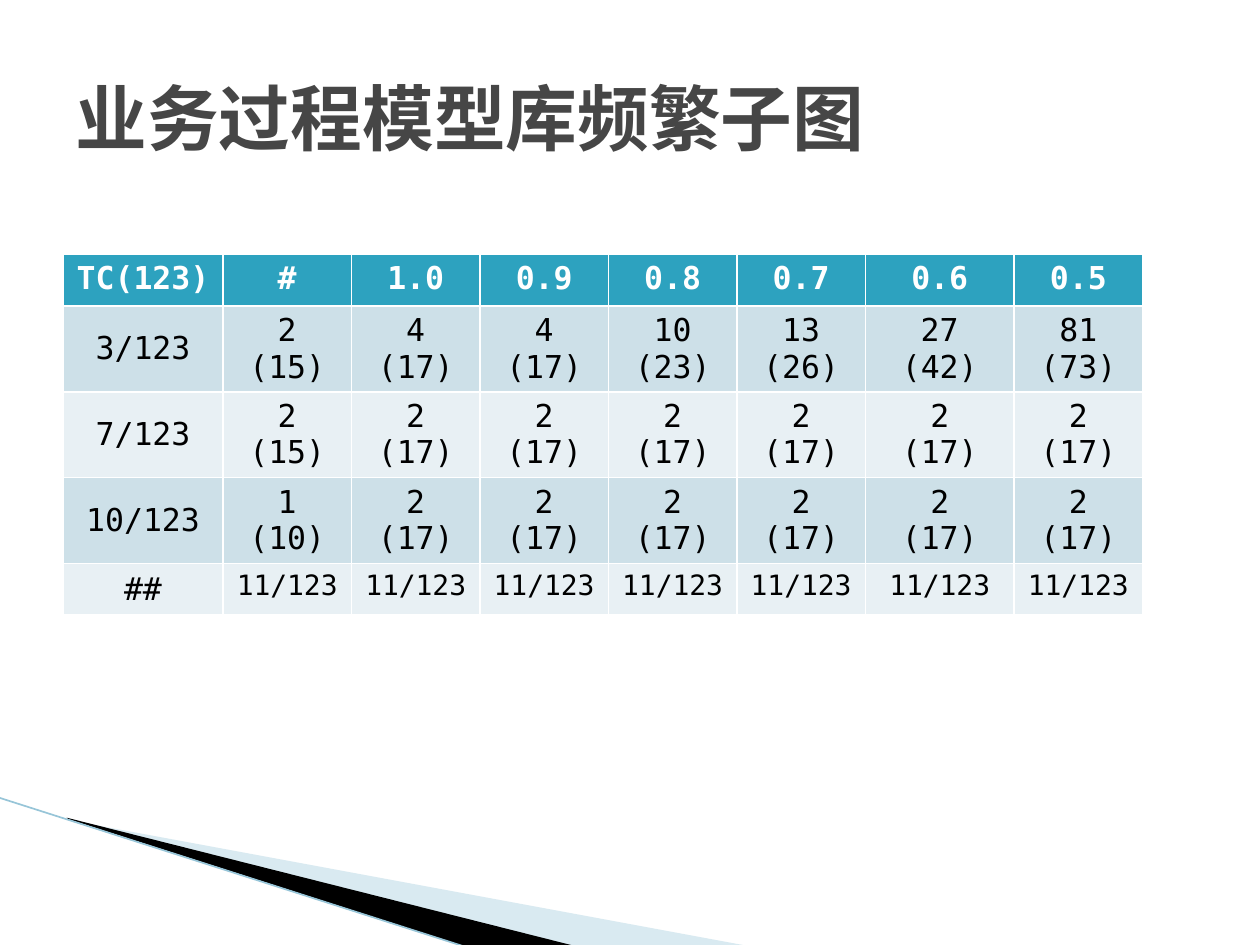
"""Build a slide with a table of frequent subgraphs in a process model library."""
from typing import NamedTuple, Optional

from lxml import etree
from pptx import Presentation
from pptx.dml.color import RGBColor
from pptx.enum.shapes import MSO_CONNECTOR
from pptx.enum.text import MSO_ANCHOR, PP_ALIGN
from pptx.oxml.ns import qn
from pptx.util import Inches, Pt

STRAIGHT = MSO_CONNECTOR.STRAIGHT
MIDDLE, TOP = MSO_ANCHOR.MIDDLE, MSO_ANCHOR.TOP
CENTER, LEFT = PP_ALIGN.CENTER, PP_ALIGN.LEFT
FACE = "DejaVu Sans Mono"
WHITE = RGBColor(0xFF, 0xFF, 0xFF)
BLACK = RGBColor(0x00, 0x00, 0x00)
GRAY = RGBColor(0x46, 0x46, 0x46)
TEAL = RGBColor(0x2D, 0xA2, 0xBF)
SKY = RGBColor(0xA0, 0xCB, 0xDC)
EDGE = RGBColor(0x97, 0xC5, 0xD8)
BANDS = (RGBColor(0xCD, 0xE0, 0xE8), RGBColor(0xE8, 0xF0, 0xF4))


class Style(NamedTuple):
    size: float
    color: RGBColor
    bold: bool = False
    align: PP_ALIGN = CENTER


class Wedge(NamedTuple):
    points: list[tuple[float, float]]
    color: RGBColor
    alpha: Optional[int] = None


HEAD = Style(18, WHITE, True)
BODY = Style(18, BLACK)
SMALL = Style(16, BLACK)
TITLE = Style(41, GRAY, True, LEFT)
WEDGES = [
    Wedge([(0.55, 6.51), (5.95, 7.51), (4.56, 7.51), (0.55, 6.5)], SKY, 40),
    Wedge([(0.53, 6.49), (4.57, 7.51), (3.72, 7.52), (0.54, 6.5)], BLACK),
]
WIDTHS = [1.27] + [1.02] * 5 + [1.18, 1.02]
ROWS = [
    ["TC(123)", "#", "1.0", "0.9", "0.8", "0.7", "0.6", "0.5"],
    ["3/123", "2\v(15)", "4\v(17)", "4\v(17)", "10\v(23)", "13\v(26)", "27\v(42)", "81\v(73)"],
    ["7/123", "2\v(15)"] + ["2\v(17)"] * 6,
    ["10/123", "1\v(10)"] + ["2\v(17)"] * 6,
    ["##"] + ["11/123"] * 7,
]


def write(frame, text: str, style: Style) -> None:
    """Put one styled paragraph in a text frame."""
    frame.text = text
    para = frame.paragraphs[0]
    para.alignment = style.align
    font = para.font
    font.name, font.size, font.bold = FACE, Pt(style.size), style.bold
    font.color.rgb = style.color


def draw_wedge(slide, wedge: Wedge) -> None:
    """Draw a filled outline without a border."""
    first, *rest = [(Inches(x), Inches(y)) for x, y in wedge.points]
    path = slide.shapes.build_freeform(*first)
    path.add_line_segments(rest)
    shape = path.convert_to_shape()
    shape.shadow.inherit = False
    shape.line.fill.background()
    shape.fill.solid()
    shape.fill.fore_color.rgb = wedge.color
    if wedge.alpha is not None:
        color = shape.fill._xPr.find(".//" + qn("a:srgbClr"))
        etree.SubElement(color, qn("a:alpha"), val=str(wedge.alpha * 1000))


def draw_edge(slide) -> None:
    """Draw the thin line along the wedges."""
    edge = slide.shapes.add_connector(
        STRAIGHT, Inches(-0.01), Inches(6.33), Inches(3.71), Inches(7.52))
    edge.line.color.rgb = EDGE
    edge.line.width = Pt(0.95)
    etree.SubElement(edge._element.spPr, qn("a:effectLst"))


def draw_table(slide) -> None:
    """Draw the table of counts."""
    high = Inches(0.41)
    table = slide.shapes.add_table(
        len(ROWS), len(WIDTHS), Inches(0.5), Inches(2.02),
        Inches(sum(WIDTHS)), high * len(ROWS)).table
    for col, width in zip(table.columns, WIDTHS):
        col.width = Inches(width)
    last = len(ROWS) - 1
    for i, row in enumerate(ROWS):
        table.rows[i].height = high
        for j, text in enumerate(row):
            cell = table.cell(i, j)
            style = HEAD if i == 0 else SMALL if i == last and j else BODY
            write(cell.text_frame, text, style)
            cell.vertical_anchor = MIDDLE if i and j == 0 else TOP
            cell.fill.solid()
            cell.fill.fore_color.rgb = BANDS[(i - 1) % 2] if i else TEAL


def draw_title(slide) -> None:
    """Draw the slide title."""
    box = slide.shapes.add_textbox(Inches(0.5), Inches(0.3), Inches(9), Inches(1.25))
    frame = box.text_frame
    frame.word_wrap = True
    frame.vertical_anchor = MIDDLE
    write(frame, "业务过程模型库频繁子图", TITLE)


def main() -> None:
    """Build and save the slide."""
    deck = Presentation()
    deck.slide_width, deck.slide_height = Inches(10), Inches(7.5)
    slide = deck.slides.add_slide(deck.slide_layouts[6])
    for wedge in WEDGES:
        draw_wedge(slide, wedge)
    draw_edge(slide)
    draw_table(slide)
    draw_title(slide)
    deck.save("out.pptx")


if __name__ == "__main__":
    main()
